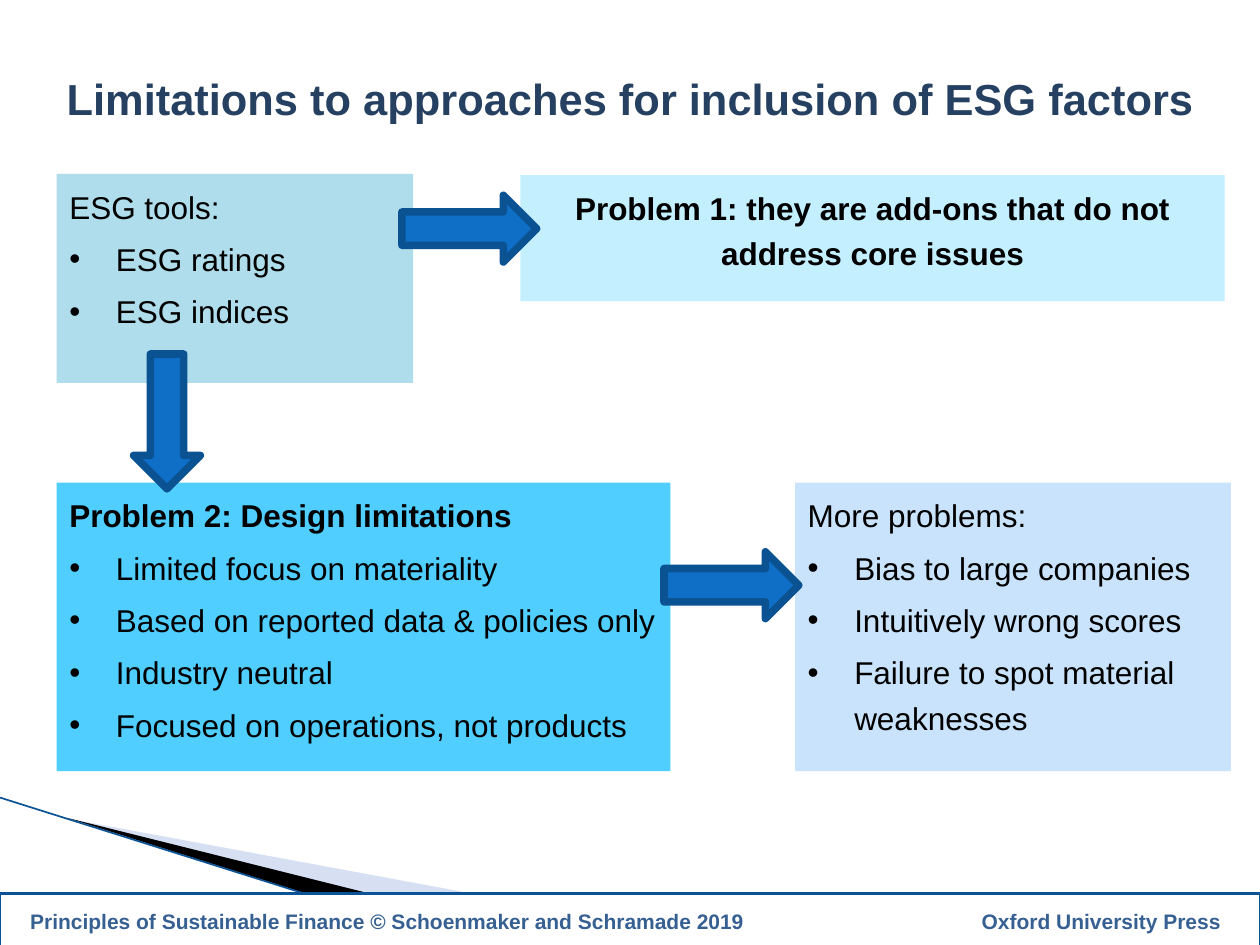
import pptx
import pptx.util
import pptx.dml.color
import pptx.enum.shapes
import pptx.enum.text
import pptx.oxml.ns
from lxml import etree

Inches = pptx.util.Inches
Pt = pptx.util.Pt
RGBColor = pptx.dml.color.RGBColor
MSO_SHAPE = pptx.enum.shapes.MSO_SHAPE
PP_ALIGN = pptx.enum.text.PP_ALIGN
MSO_ANCHOR = pptx.enum.text.MSO_ANCHOR
qn = pptx.oxml.ns.qn

WHITE = RGBColor(0xFF, 0xFF, 0xFF)
BLACK = RGBColor(0, 0, 0)
TITLE_NAVY = RGBColor(0x25, 0x40, 0x61)
FOOTER_TEXT = RGBColor(0x37, 0x60, 0x92)
FOOTER_EDGE = RGBColor(0x0B, 0x53, 0x94)
CORNER_PALE = RGBColor(0x9D, 0xB2, 0xE1)
ARROW_FILL = RGBColor(0x0F, 0x6F, 0xC6)
ARROW_EDGE = RGBColor(0x0B, 0x52, 0x92)
TOOLS_BLUE = RGBColor(0xAF, 0xDD, 0xEB)
DESIGN_BLUE = RGBColor(0x4F, 0xCE, 0xFF)
MORE_BLUE = RGBColor(0xC8, 0xE3, 0xFB)
ADDON_BLUE = RGBColor(0xC4, 0xEF, 0xFF)


def place(shape, left, top, width, height, fill):
    shape.left, shape.top = Inches(left), Inches(top)
    shape.width, shape.height = Inches(width), Inches(height)
    shape.fill.solid()
    shape.fill.fore_color.rgb = fill
    frame = shape.text_frame
    frame.word_wrap = True
    frame.auto_size = pptx.enum.text.MSO_AUTO_SIZE.NONE
    frame.vertical_anchor = MSO_ANCHOR.TOP
    return frame


def add_run(paragraph, text, size, color, bold):
    run = paragraph.add_run()
    run.text = text
    run.font.name = "Arial"
    run.font.size = Pt(size)
    run.font.bold = bold
    run.font.color.rgb = color


prs = pptx.Presentation()
prs.slide_width, prs.slide_height = Inches(10), Inches(7.5)
# The comparison layout offers a title and four bodies
slide = prs.slides.add_slide(prs.slide_layouts[4])
shapes = slide.shapes

# Title
title = place(shapes.title, 0.28, 0.52, 9.45, 0.71, WHITE).paragraphs[0]
title.alignment = PP_ALIGN.CENTER
add_run(title, "Limitations to approaches for inclusion of ESG factors", 24.8, TITLE_NAVY, True)

# Boxes: placeholder, position, fill, heading, bold heading, alignment, bullets
boxes = [
    (1, (0.45, 1.38, 2.83, 1.66), TOOLS_BLUE, "ESG tools:", False, PP_ALIGN.LEFT,
     ["ESG ratings", "ESG indices"]),
    (2, (0.45, 3.83, 4.87, 2.29), DESIGN_BLUE, "Problem 2: Design limitations", True, PP_ALIGN.LEFT,
     ["Limited focus on materiality", "Based on reported data & policies only",
      "Industry neutral", "Focused on operations, not products"]),
    (3, (6.31, 3.83, 3.46, 2.29), MORE_BLUE, "More problems:", False, PP_ALIGN.LEFT,
     ["Bias to large companies", "Intuitively wrong scores",
      "Failure to spot material weaknesses"]),
    (4, (4.13, 1.39, 5.59, 1), ADDON_BLUE,
     "Problem 1: they are add-ons that do not address core issues", True, PP_ALIGN.CENTER, []),
]
for index, position, fill, heading, bold_heading, alignment, bullets in boxes:
    frame = place(slide.placeholders[index], *position, fill)
    for row, text in enumerate([heading] + bullets):
        paragraph = frame.add_paragraph() if row else frame.paragraphs[0]
        paragraph.alignment = alignment
        paragraph.line_spacing = 1.2
        paragraph.space_before = Pt(4 if row else 0)
        properties = paragraph._p.get_or_add_pPr()
        indent = Inches(0.37) if row else 0
        properties.set("marL", str(indent))
        properties.set("indent", str(-indent))
        if row:
            etree.SubElement(properties, qn("a:buFont"), typeface="Arial")
            etree.SubElement(properties, qn("a:buChar"), char="•")
        else:
            etree.SubElement(properties, qn("a:buNone"))
        add_run(paragraph, text, 18, BLACK, bold_heading and row == 0)

# Corner wedges and edge line
wedges = [
    ([(0.55, 6.5), (5.95, 7.5), (4.56, 7.5)], CORNER_PALE, 40),
    ([(0.53, 6.49), (4.57, 7.5), (3.72, 7.5)], BLACK, 100),
]
for points, color, opacity in wedges:
    corners = [(Inches(x), Inches(y)) for x, y in points]
    builder = shapes.build_freeform(*corners[0])
    builder.add_line_segments(corners[1:], close=True)
    wedge = builder.convert_to_shape()
    wedge.shadow.inherit = False
    wedge.fill.solid()
    wedge.fill.fore_color.rgb = color
    wedge.line.fill.background()
    if opacity < 100:
        srgb = wedge._element.spPr.find(".//" + qn("a:srgbClr"))
        etree.SubElement(srgb, qn("a:alpha"), val=str(opacity * 1000))

edge = shapes.add_connector(pptx.enum.shapes.MSO_CONNECTOR.STRAIGHT,
                            Inches(0), Inches(6.33), Inches(3.71), Inches(7.5))
edge.line.color.rgb = FOOTER_EDGE
edge.line.width = Pt(0.95)
etree.SubElement(edge._element.spPr, qn("a:effectLst"))

# Footer, with the publisher on a right tab
footer = shapes.add_shape(MSO_SHAPE.RECTANGLE, 0, 0, 0, 0)
footer.shadow.inherit = False
footer.line.color.rgb = FOOTER_EDGE
footer.line.width = Pt(1.5)
frame = place(footer, 0, 7.09, 10, 0.44, WHITE)
frame.vertical_anchor = MSO_ANCHOR.MIDDLE
frame.margin_left = Inches(0.24)
credit = frame.paragraphs[0]
credit.alignment = PP_ALIGN.LEFT
tabs = etree.SubElement(credit._p.get_or_add_pPr(), qn("a:tabLst"))
etree.SubElement(tabs, qn("a:tab"), pos=str(Inches(9.45)), algn="r")
add_run(credit, "Principles of Sustainable Finance © Schoenmaker and Schramade 2019\tOxford University Press",
        12, FOOTER_TEXT, True)

# Block arrows between the boxes
for left, top, rotation in [(3.19, 1.55, 0), (5.27, 4.38, 0), (0.79, 3.08, 90)]:
    arrow = shapes.add_shape(MSO_SHAPE.RIGHT_ARROW, Inches(left), Inches(top), Inches(1.07), Inches(0.53))
    arrow.rotation = rotation
    arrow.shadow.inherit = False
    arrow.fill.solid()
    arrow.fill.fore_color.rgb = ARROW_FILL
    arrow.line.color.rgb = ARROW_EDGE
    arrow.line.width = Pt(4.33)
    etree.SubElement(arrow._element.spPr.find(qn("a:ln")), qn("a:round"))

prs.save("out.pptx")
